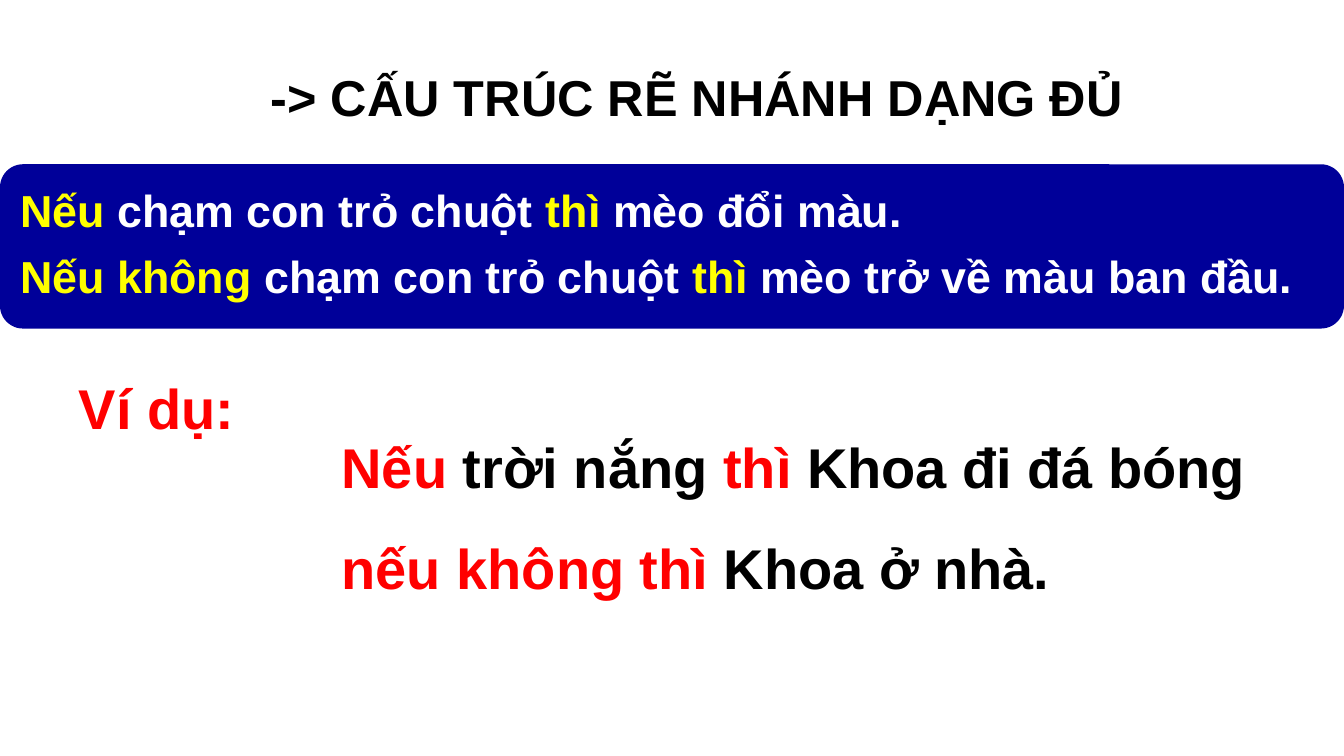
from dataclasses import dataclass

from pptx import Presentation
from pptx.dml.color import RGBColor
from pptx.enum.shapes import MSO_SHAPE
from pptx.enum.text import MSO_ANCHOR, MSO_AUTO_SIZE, PP_ALIGN
from pptx.util import Cm, Pt

ROUNDED = MSO_SHAPE.ROUNDED_RECTANGLE
TOP, MIDDLE = MSO_ANCHOR.TOP, MSO_ANCHOR.MIDDLE
LEFT, CENTER, JUSTIFY = PP_ALIGN.LEFT, PP_ALIGN.CENTER, PP_ALIGN.JUSTIFY
NO_AUTOSIZE = MSO_AUTO_SIZE.NONE
TITLE_ONLY = 5

FONT = "Arial"
BLACK, WHITE = "000000", "FFFFFF"
RED, YELLOW, NAVY = "FF0000", "FFFF00", "000099"


@dataclass
class Line:
    runs: list[tuple[str, str]]
    size: float
    align: PP_ALIGN = LEFT
    spacing: float = 1.0
    space_after: float = 0


@dataclass
class Panel:
    box: tuple[float, float, float, float]
    fill: str
    corner: float
    inset: float
    lines: list[Line]


def color(value: str) -> RGBColor:
    return RGBColor.from_string(value)


def write_lines(frame, lines: list[Line], anchor: MSO_ANCHOR) -> None:
    frame.word_wrap = True
    frame.auto_size = NO_AUTOSIZE
    frame.vertical_anchor = anchor
    for index, line in enumerate(lines):
        paragraph = frame.add_paragraph() if index else frame.paragraphs[0]
        paragraph.alignment = line.align
        paragraph.line_spacing = line.spacing
        paragraph.space_after = Pt(line.space_after)
        paragraph.font.name = FONT
        paragraph.font.size = Pt(line.size)
        paragraph.font.bold = True
        for text, run_color in line.runs:
            run = paragraph.add_run()
            run.text = text
            run.font.color.rgb = color(run_color)


def add_panel(slide, panel: Panel) -> None:
    shape = slide.shapes.add_shape(ROUNDED, *map(Cm, panel.box))
    shape.adjustments[0] = panel.corner
    shape.shadow.inherit = False
    shape.fill.solid()
    shape.fill.fore_color.rgb = color(panel.fill)
    shape.line.fill.background()
    frame = shape.text_frame
    frame.margin_left = frame.margin_right = Cm(panel.inset)
    frame.margin_top = frame.margin_bottom = Cm(panel.inset)
    write_lines(frame, panel.lines, MIDDLE)


TITLE = [Line([("-> CẤU TRÚC RẼ NHÁNH DẠNG ĐỦ", BLACK)], 36, CENTER)]

EXAMPLE = [
    Line([("Nếu ", RED), ("trời nắng ", BLACK), ("thì ", RED),
          ("Khoa đi đá bóng", BLACK)], 40, JUSTIFY),
    Line([("nếu không thì ", RED), ("Khoa ở nhà.", BLACK)], 40, JUSTIFY, 1.5),
]

PANELS = [
    Panel((0.97, 9.19, 6.35, 2.36), WHITE, 0.1, 0.44,
          [Line([("Ví dụ: ", RED)], 40, CENTER, 0.9)]),
    Panel((0, 4.14, 33.87, 4.14), NAVY, 0.14, 0.34, [
        Line([("Nếu", YELLOW), (" chạm con trỏ chuột ", WHITE),
              ("thì", YELLOW), (" mèo đổi màu.", WHITE)],
             32, LEFT, 0.9, 12.6),
        Line([("Nếu không ", YELLOW), ("chạm con trỏ chuột ", WHITE),
              ("thì", YELLOW), (" mèo trở về màu ban đầu.", WHITE)],
             32, LEFT, 0.9),
    ]),
]


def main() -> None:
    presentation = Presentation()
    presentation.slide_width, presentation.slide_height = Cm(33.87), Cm(19.05)
    slide = presentation.slides.add_slide(presentation.slide_layouts[TITLE_ONLY])
    slide.background.fill.solid()
    slide.background.fill.fore_color.rgb = color(WHITE)

    # Title
    title = slide.shapes.title
    title.left, title.top = Cm(1.12), Cm(1.55)
    title.width, title.height = Cm(32.89), Cm(1.8)
    write_lines(title.text_frame, TITLE, TOP)

    # Example sentence
    example = slide.shapes.add_textbox(Cm(8.36), Cm(10.77), Cm(24.94), Cm(4.22))
    write_lines(example.text_frame, EXAMPLE, TOP)

    # Example label and rule panel
    for panel in PANELS:
        add_panel(slide, panel)

    presentation.save("out.pptx")


if __name__ == "__main__":
    main()
